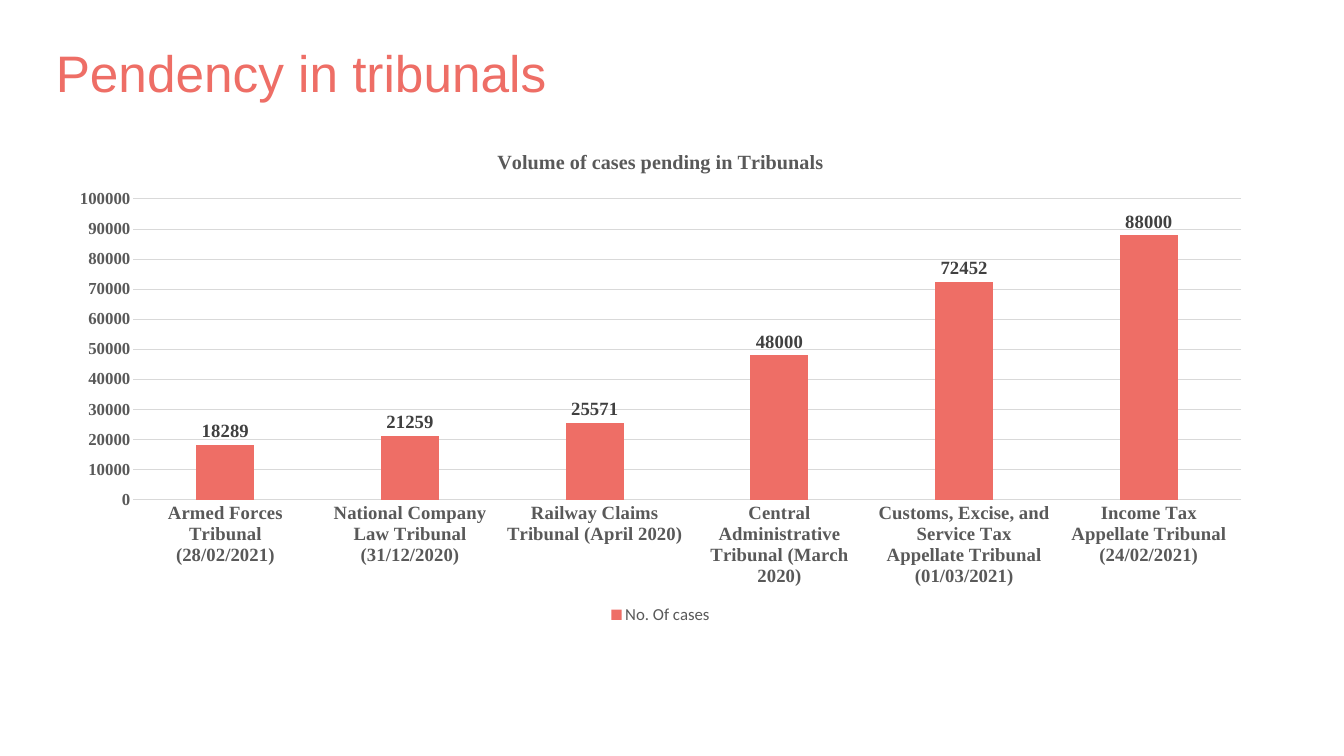
from pptx import Presentation
from pptx.chart.data import CategoryChartData
from pptx.dml.color import RGBColor
from pptx.enum.chart import XL_CHART_TYPE, XL_LABEL_POSITION, XL_LEGEND_POSITION, XL_TICK_MARK
from pptx.enum.text import MSO_ANCHOR, MSO_AUTO_SIZE, PP_ALIGN
from pptx.util import Inches, Pt

CORAL, GREY, DARK, RULE = "EE6E66", "595959", "404040", "D9D9D9"
SERIF = "Times New Roman"
PENDING_CASES = {
    "Armed Forces Tribunal (28/02/2021)": 18289,
    "National Company Law Tribunal (31/12/2020)": 21259,
    "Railway Claims Tribunal (April 2020)": 25571,
    "Central Administrative Tribunal (March 2020)": 48000,
    "Customs, Excise, and Service Tax Appellate Tribunal (01/03/2021)": 72452,
    "Income Tax Appellate Tribunal (24/02/2021)": 88000,
}


def color(hex_code):
    return RGBColor.from_string(hex_code)


def style_font(font, size, hex_code, name, bold=False):
    font.size = Pt(size)
    font.color.rgb = color(hex_code)
    font.name = name
    font.bold = bold


def style_rule(line):
    line.color.rgb = color(RULE)
    line.width = Pt(0.75)


def place_heading(slide, left, top, width, height):
    heading = slide.shapes.title
    heading.left, heading.top, heading.width, heading.height = left, top, width, height
    frame = heading.text_frame
    frame.margin_left = frame.margin_right = frame.margin_top = frame.margin_bottom = 0
    frame.vertical_anchor = MSO_ANCHOR.TOP
    frame.word_wrap = True
    frame.auto_size = MSO_AUTO_SIZE.SHAPE_TO_FIT_TEXT
    paragraph = frame.paragraphs[0]
    paragraph.alignment = PP_ALIGN.LEFT
    paragraph.line_spacing = Pt(77)
    run = paragraph.add_run()
    run.text = "Pendency in tribunals"
    style_font(run.font, 55, CORAL, "Arial")


def place_pending_chart(slide, left, top, width, height):
    data = CategoryChartData()
    data.categories = list(PENDING_CASES)
    data.add_series("No. Of cases", list(PENDING_CASES.values()))
    chart = slide.shapes.add_chart(
        XL_CHART_TYPE.COLUMN_CLUSTERED, left, top, width, height, data).chart
    style_font(chart.font, 18, "000000", "Calibri")

    # Chart title
    chart.has_title = True
    caption = chart.chart_title.text_frame.paragraphs[0].add_run()
    caption.text = "Volume of cases pending in Tribunals"
    style_font(caption.font, 21.6, GREY, SERIF, bold=True)
    chart.chart_title.include_in_layout = False

    # Axes
    tribunals, volumes = chart.category_axis, chart.value_axis
    for axis, size in ((tribunals, 20), (volumes, 18)):
        axis.major_tick_mark = axis.minor_tick_mark = XL_TICK_MARK.NONE
        style_font(axis.tick_labels.font, size, GREY, SERIF, bold=True)
    style_rule(tribunals.format.line)
    volumes.format.line.fill.background()
    style_rule(volumes.major_gridlines.format.line)
    volumes.minimum_scale, volumes.maximum_scale, volumes.major_unit = 0, 100000, 10000

    # Columns and their values
    plot = chart.plots[0]
    plot.gap_width, plot.overlap = 219, -27
    plot.vary_by_categories = False
    cases = plot.series[0]
    cases.format.fill.solid()
    cases.format.fill.fore_color.rgb = color(CORAL)
    labels = cases.data_labels
    labels.show_value = True
    labels.position = XL_LABEL_POSITION.OUTSIDE_END
    style_font(labels.font, 20, DARK, SERIF, bold=True)

    # Legend
    chart.has_legend = True
    chart.legend.position = XL_LEGEND_POSITION.BOTTOM
    chart.legend.include_in_layout = False
    style_font(chart.legend.font, 18, GREY, "Calibri")


def main():
    deck = Presentation()
    deck.slide_width, deck.slide_height = Inches(20), Inches(11.25)
    slide = deck.slides.add_slide(deck.slide_layouts[5])
    place_pending_chart(slide, Inches(0.83), Inches(1.96), Inches(18), Inches(7.39))
    place_heading(slide, Inches(0.83), Inches(0.46), Inches(17.29), Inches(0.99))
    deck.save("out.pptx")


if __name__ == "__main__":
    main()
